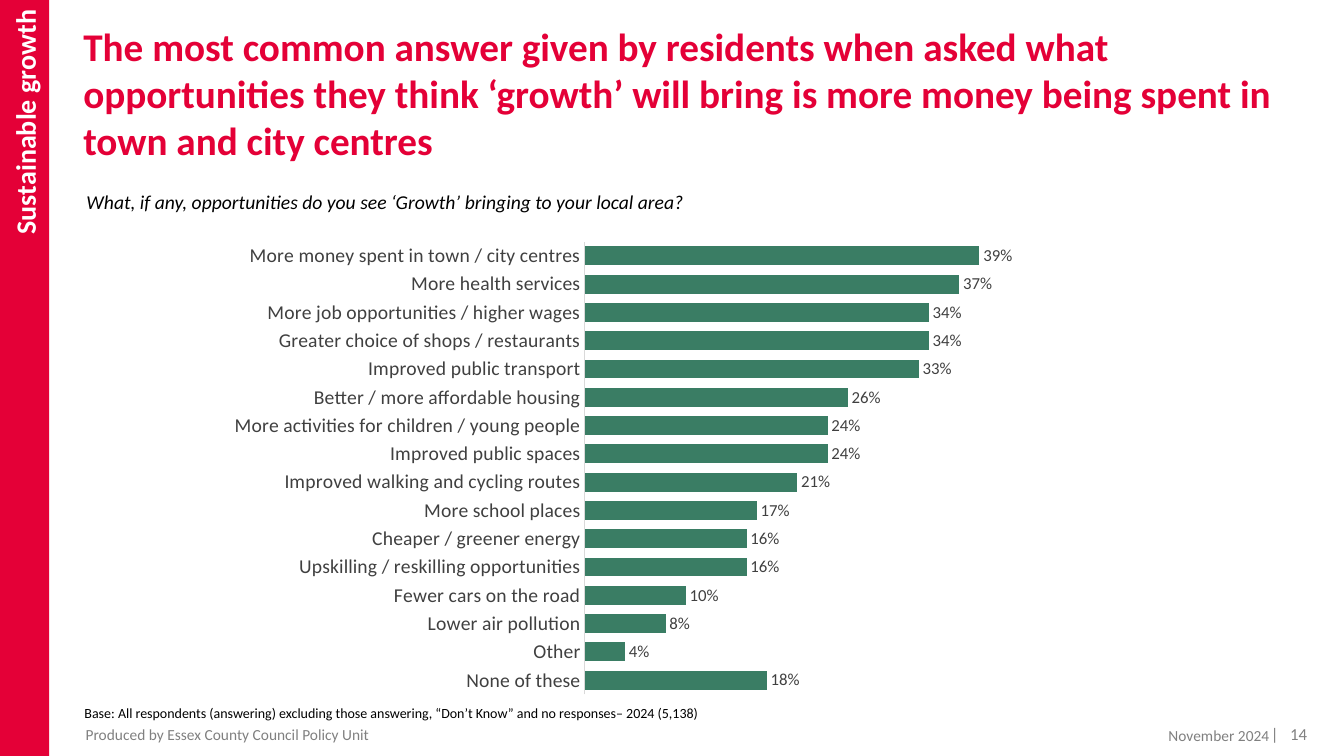
from dataclasses import dataclass

from lxml import etree
from pptx import Presentation
from pptx.chart.data import CategoryChartData
from pptx.dml.color import RGBColor
from pptx.enum.chart import XL_CHART_TYPE, XL_LABEL_POSITION, XL_TICK_MARK
from pptx.enum.shapes import MSO_SHAPE
from pptx.enum.text import MSO_ANCHOR, PP_ALIGN
from pptx.util import Cm, Pt

BAR_CLUSTERED = XL_CHART_TYPE.BAR_CLUSTERED
OUTSIDE_END = XL_LABEL_POSITION.OUTSIDE_END
NO_TICK = XL_TICK_MARK.NONE
RECTANGLE = MSO_SHAPE.RECTANGLE
TOP, MIDDLE = MSO_ANCHOR.TOP, MSO_ANCHOR.MIDDLE
LEFT, RIGHT = PP_ALIGN.LEFT, PP_ALIGN.RIGHT

FONT = "Calibri"
COLOURS = {
    "red": "E40037", "green": "3A7D64", "white": "FFFFFF", "black": "000000",
    "dark_grey": "404040", "grey": "808080", "axis": "D9D9D9",
}
CHART_NS = "http://schemas.openxmlformats.org/drawingml/2006/chart"

# Share of residents naming each opportunity, in percent
OPPORTUNITIES = {
    "More money spent in town / city centres": 39,
    "More health services": 37,
    "More job opportunities / higher wages": 34,
    "Greater choice of shops / restaurants": 34,
    "Improved public transport": 33,
    "Better / more affordable housing": 26,
    "More activities for children / young people": 24,
    "Improved public spaces": 24,
    "Improved walking and cycling routes": 21,
    "More school places": 17,
    "Cheaper / greener energy": 16,
    "Upskilling / reskilling opportunities": 16,
    "Fewer cars on the road": 10,
    "Lower air pollution": 8,
    "Other": 4,
    "None of these": 18,
}


@dataclass
class Span:
    text: str
    spacing: float = 0  # extra points after each character


@dataclass
class Label:
    area: tuple[float, float, float, float]  # left, top, width, height in cm
    spans: list[Span]
    size: float
    colour: str
    bold: bool = False
    italic: bool = False
    align: PP_ALIGN = LEFT
    anchor: MSO_ANCHOR = TOP
    insets: tuple[float, float, float, float] = (0.25, 0.13, 0.25, 0.13)


SIDEBAR = Label((0, 0, 1.24, 19.05), [Span("Sustainable growth")], 20, "white",
                bold=True, align=RIGHT, anchor=MIDDLE, insets=(0.25, 0.25, 0.25, 0.13))

LABELS = [
    Label((1.85, 0.43, 31.12, 3.84),
          [Span("The most common answer given by residents when asked what opportunities "
                "they think ‘growth’ will bring is more money being spent in town and "
                "city centres")],
          28, "red", bold=True, insets=(0.25, 0.13, 0.25, 0)),
    Label((1.93, 4.65, 30.66, 0.86),
          [Span("What, if any, opportunities do you see ‘Growth’ bringing to your local area?")],
          14, "black", italic=True),
    Label((1.88, 17.63, 17.78, 0.69),
          [Span("Base: All respondents (answering) excluding those answering, "
                "“Don’t Know” and no responses– 2024 (5,138)")],
          10, "black"),
    Label((1.93, 18.31, 16.61, 0.38),
          [Span("Produced by Essex County Council Policy Unit")],
          11, "grey", anchor=MIDDLE, insets=(0.23, 0.13, 0.25, 0.13)),
    Label((30.78, 18.31, 2.16, 0.38), [Span("|"), Span(" ", 5.4), Span("14")],
          12, "grey", align=RIGHT, anchor=MIDDLE, insets=(0.25, 0.13, 0, 0.13)),
    Label((26.14, 18.16, 6.1, 0.38), [Span("November 2024")], 11, "grey", align=RIGHT),
]


def rgb(name: str) -> RGBColor:
    return RGBColor.from_string(COLOURS[name])


def style_font(font, size: float, colour: str) -> None:
    font.name = FONT
    font.size = Pt(size)
    font.color.rgb = rgb(colour)


def write_label(box, label: Label) -> None:
    frame = box.text_frame
    frame.word_wrap = True
    frame.vertical_anchor = label.anchor
    (frame.margin_left, frame.margin_top,
     frame.margin_right, frame.margin_bottom) = map(Cm, label.insets)
    para = frame.paragraphs[0]
    para.alignment = label.align
    for span in label.spans:
        run = para.add_run()
        run.text = span.text
        style_font(run.font, label.size, label.colour)
        run.font.bold = label.bold
        run.font.italic = label.italic
        if span.spacing:
            run.font._element.set("spc", str(round(span.spacing * 100)))


def add_sidebar(page) -> None:
    bar = page.shapes.add_shape(RECTANGLE, *map(Cm, SIDEBAR.area))
    bar.shadow.inherit = False
    bar.fill.solid()
    bar.fill.fore_color.rgb = rgb("red")
    bar.line.fill.background()
    write_label(bar, SIDEBAR)
    bar.text_frame._txBody.bodyPr.set("vert", "vert270")


def place_plot(chart, x: float, y: float, width: float, height: float) -> None:
    plot_area = chart._chartSpace.chart.plotArea
    for old in plot_area.findall(f"{{{CHART_NS}}}layout"):
        plot_area.remove(old)
    layout = etree.Element(f"{{{CHART_NS}}}layout")
    manual = etree.SubElement(layout, f"{{{CHART_NS}}}manualLayout")
    settings = {"layoutTarget": "inner", "xMode": "edge", "yMode": "edge",
                "x": x, "y": y, "w": width, "h": height}
    for tag, value in settings.items():
        etree.SubElement(manual, f"{{{CHART_NS}}}{tag}").set("val", str(value))
    plot_area.insert(0, layout)


def add_opportunity_chart(page) -> None:
    data = CategoryChartData(number_format="0%")
    data.categories = list(OPPORTUNITIES)
    data.add_series("Series 1", [share / 100 for share in OPPORTUNITIES.values()])
    area = map(Cm, (2.67, 5.44, 24.82, 12.07))
    chart = page.shapes.add_chart(BAR_CLUSTERED, *area, data).chart
    chart.has_legend = False
    chart.has_title = False
    style_font(chart.font, 10, "black")

    # Axes
    categories = chart.category_axis
    categories.reverse_order = True
    categories.major_tick_mark = categories.minor_tick_mark = NO_TICK
    categories.format.line.color.rgb = rgb("axis")
    categories.format.line.width = Pt(0.75)
    style_font(categories.tick_labels.font, 14, "dark_grey")
    values = chart.value_axis
    values.minimum_scale, values.maximum_scale = 0, 0.5
    values.has_major_gridlines = False
    values.visible = False

    # Bars and their values
    plot = chart.plots[0]
    plot.gap_width = 50
    plot.vary_by_categories = False
    series = plot.series[0]
    series.format.fill.solid()
    series.format.fill.fore_color.rgb = rgb("green")
    labels = series.data_labels
    labels.show_value = True
    labels.number_format = "0%"
    labels.number_format_is_linked = False
    labels.position = OUTSIDE_END
    style_font(labels.font, 12, "dark_grey")
    place_plot(chart, 0.486, 0.054, 0.514, 0.946)


def main() -> None:
    deck = Presentation()
    deck.slide_width, deck.slide_height = Cm(33.87), Cm(19.05)
    page = deck.slides.add_slide(deck.slide_layouts[6])
    add_opportunity_chart(page)
    add_sidebar(page)
    for label in LABELS:
        write_label(page.shapes.add_textbox(*map(Cm, label.area)), label)
    deck.save("out.pptx")


if __name__ == "__main__":
    main()
